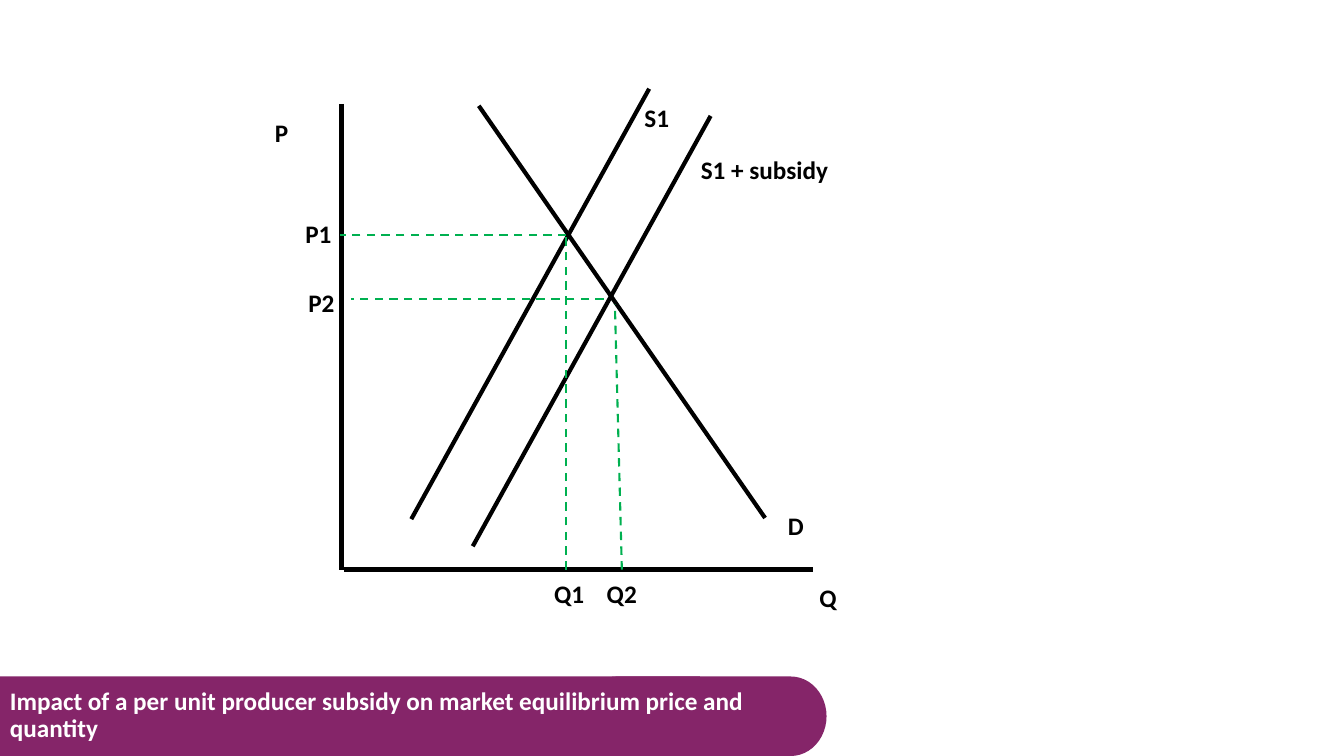
"""Build a slide showing how a per unit producer subsidy moves market equilibrium."""
import pptx
import pptx.dml.color
import pptx.enum.dml
import pptx.enum.shapes
import pptx.enum.text
import pptx.oxml.ns
import pptx.util
import lxml.etree

Pt = pptx.util.Pt
SHAPES = pptx.enum.shapes.MSO_SHAPE
ALIGN = pptx.enum.text.PP_ALIGN
BLACK, GREEN, PURPLE, WHITE = "000000", "00B050", "852569", "FFFFFF"


def color(hex_value):
    return pptx.dml.color.RGBColor.from_string(hex_value)


def add_text(page, text, left, top, width, height, align, hex_value):
    box = page.shapes.add_textbox(Pt(left), Pt(top), Pt(width), Pt(height))
    box.text_frame.word_wrap = True
    para = box.text_frame.paragraphs[0]
    para.alignment = align
    span = para.add_run()
    span.text = text
    font_format = {"name": "Calibri", "size": Pt(18), "bold": True}
    for name, value in font_format.items():
        setattr(span.font, name, value)
    span.font.color.rgb = color(hex_value)
    return box


deck = pptx.Presentation()
deck.slide_width, deck.slide_height = Pt(960), Pt(540)
page = deck.slides.add_slide(deck.slide_layouts[6])

banner_top, banner_height = 483.2, 56.8
banner_parts = [
    (SHAPES.RECTANGLE, 0, 500, 0),
    (SHAPES.FLOWCHART_STORED_DATA, 437, 153.4, 180),
]
for kind, left, width, rotation in banner_parts:
    part = page.shapes.add_shape(kind, Pt(left), Pt(banner_top), Pt(width), Pt(banner_height))
    part.rotation = rotation
    part.shadow.inherit = False
    part.fill.solid()
    part.fill.fore_color.rgb = color(PURPLE)
    part.line.fill.background()

axis_bottom = 406.8
axes_and_curves = [
    (244, 74.2, 244, axis_bottom),
    (245.5, axis_bottom, 581, axis_bottom),
    (342, 75.6, 546.5, 370),
    (507.6, 82.8, 337.7, 390.2),
    (463.7, 63.4, 293.8, 370.8),
]
guides = [
    (404.6, 167.8, 242.6, 167.8),
    (431.3, 213.8, 250.6, 213.8),
    (404.6, axis_bottom, 404.6, 167),
    (444.2, axis_bottom, 439.2, 217.4),
]
line_groups = [
    (axes_and_curves, BLACK, 3, None),
    (guides, GREEN, 1.5, pptx.enum.dml.MSO_LINE.DASH),
]
for segments, hex_value, thickness, dash in line_groups:
    for segment in segments:
        line = page.shapes.add_connector(
            pptx.enum.shapes.MSO_CONNECTOR.STRAIGHT, *[Pt(value) for value in segment]
        )
        line.line.color.rgb = color(hex_value)
        line.line.width = Pt(thickness)
        line.line.dash_style = dash
        properties = line.element.find(pptx.oxml.ns.qn("p:spPr"))
        lxml.etree.SubElement(properties, pptx.oxml.ns.qn("a:effectLst"))

labels = [
    ("P", 156.2, 80.6, 90, ALIGN.CENTER),
    ("Q", 546.5, 412.6, 90, ALIGN.CENTER),
    ("D", 523.4, 360.7, 90, ALIGN.CENTER),
    ("S1", 424.1, 69.8, 90, ALIGN.CENTER),
    ("S1 + subsidy", 476.6, 106.6, 139, ALIGN.CENTER),
    ("P1", 211, 152.6, 60, ALIGN.LEFT),
    ("P2", 213.1, 201.6, 60, ALIGN.LEFT),
    ("Q1", 388.8, 409.7, 60, ALIGN.LEFT),
    ("Q2", 426.3, 409.7, 60, ALIGN.LEFT),
]
for text, left, top, width, align in labels:
    add_text(page, text, left, top, width, 29, align, BLACK)

title = add_text(
    page,
    "Impact of a per unit producer subsidy on market equilibrium price and quantity",
    0, banner_top, 566.6, banner_height, ALIGN.LEFT, WHITE,
)
title.text_frame.vertical_anchor = pptx.enum.text.MSO_ANCHOR.MIDDLE
title.text_frame.paragraphs[0].line_spacing = 0.9

deck.save("out.pptx")
